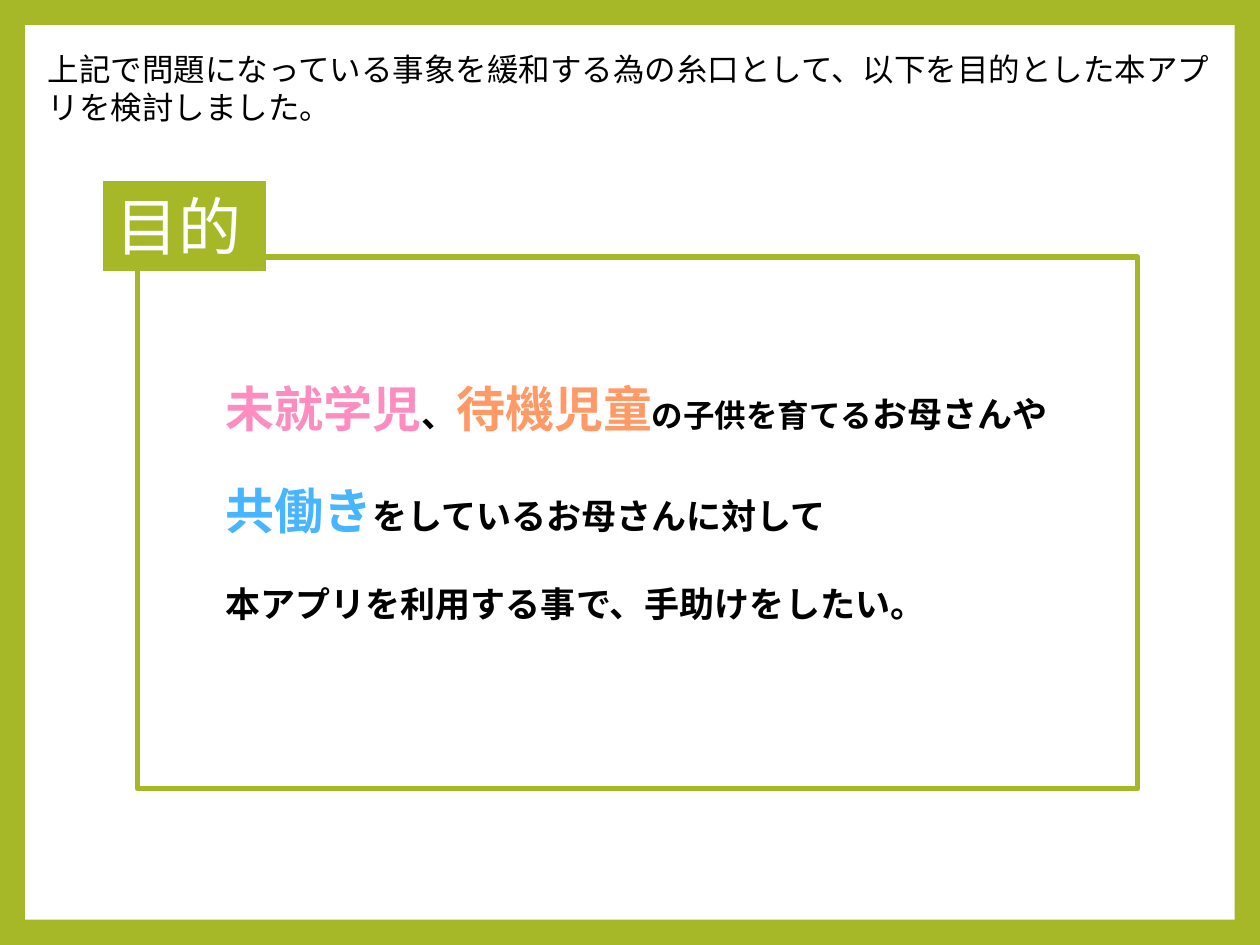
from pptx import Presentation
from pptx.dml.color import RGBColor
from pptx.enum.shapes import MSO_SHAPE
from pptx.enum.text import MSO_ANCHOR, PP_ALIGN
from pptx.util import Inches, Pt

RECTANGLE = MSO_SHAPE.RECTANGLE
TOP, MIDDLE = MSO_ANCHOR.TOP, MSO_ANCHOR.MIDDLE
LEFT = PP_ALIGN.LEFT
COLORS = {
    "green": "A6B727",
    "white": "FFFFFF",
    "black": "000000",
    "pink": "FD8DC0",
    "orange": "FF9966",
    "blue": "47B5FF",
}


def add_box(left, top, width, height, fill, line_width=0):
    box = slide.shapes.add_shape(
        RECTANGLE, Inches(left), Inches(top), Inches(width), Inches(height))
    box.shadow.inherit = False
    box.fill.solid()
    box.fill.fore_color.rgb = RGBColor.from_string(COLORS[fill])
    if line_width:
        box.line.color.rgb = RGBColor.from_string(COLORS["green"])
        box.line.width = Pt(line_width)
    else:
        box.line.fill.background()
    return box


def write(frame, lines, bold=False, gap=0, **frame_format):
    settings = {"word_wrap": True, "vertical_anchor": TOP, **frame_format}
    for name, value in settings.items():
        setattr(frame, name, value)
    for number, line in enumerate(lines):
        paragraph = frame.paragraphs[0] if number == 0 else frame.add_paragraph()
        paragraph.alignment = LEFT
        paragraph.space_before = Pt(gap if number else 0)
        for text, size, color in line:
            run = paragraph.add_run()
            run.text = text
            font_format = {"name": "Calibri", "size": Pt(size), "bold": bold}
            for name, value in font_format.items():
                setattr(run.font, name, value)
            run.font.color.rgb = RGBColor.from_string(COLORS[color])


prs = Presentation()
prs.slide_width, prs.slide_height = Inches(10), Inches(7.5)
slide = prs.slides.add_slide(prs.slide_layouts[6])

# Green border around a white page
slide.background.fill.solid()
slide.background.fill.fore_color.rgb = RGBColor.from_string(COLORS["green"])
add_box(0.2, 0.2, 9.6, 7.1, "white")

# Purpose statement
purpose = add_box(1.09, 2.04, 7.94, 4.22, "white", 3)
purpose_lines = [
    [("未就学児", 28, "pink"), ("、", 20, "black"), ("待機児童", 28, "orange"),
     ("の子供を育てる", 18, "black"), ("お母さんや", 20, "black")],
    [("共働き", 28, "blue"), ("をしているお母さんに対して", 20, "black")],
    [("本アプリを利用する事で、手助けをしたい。", 20, "black")],
]
write(purpose.text_frame, purpose_lines, bold=True, gap=24.4,
      vertical_anchor=MIDDLE, margin_left=Inches(0.7), margin_bottom=Inches(0.39))

# Heading tab
heading = add_box(0.82, 1.44, 1.29, 0.71, "green", 0.75)
write(heading.text_frame, [[("目的", 36, "white")]])

# Introduction
intro = slide.shapes.add_textbox(
    Inches(0.28), Inches(0.35), Inches(9.44), Inches(0.71))
intro_text = "上記で問題になっている事象を緩和する為の糸口として、以下を目的とした本アプリを検討しました。"
write(intro.text_frame, [[(intro_text, 18, "black")]])

prs.save("out.pptx")
